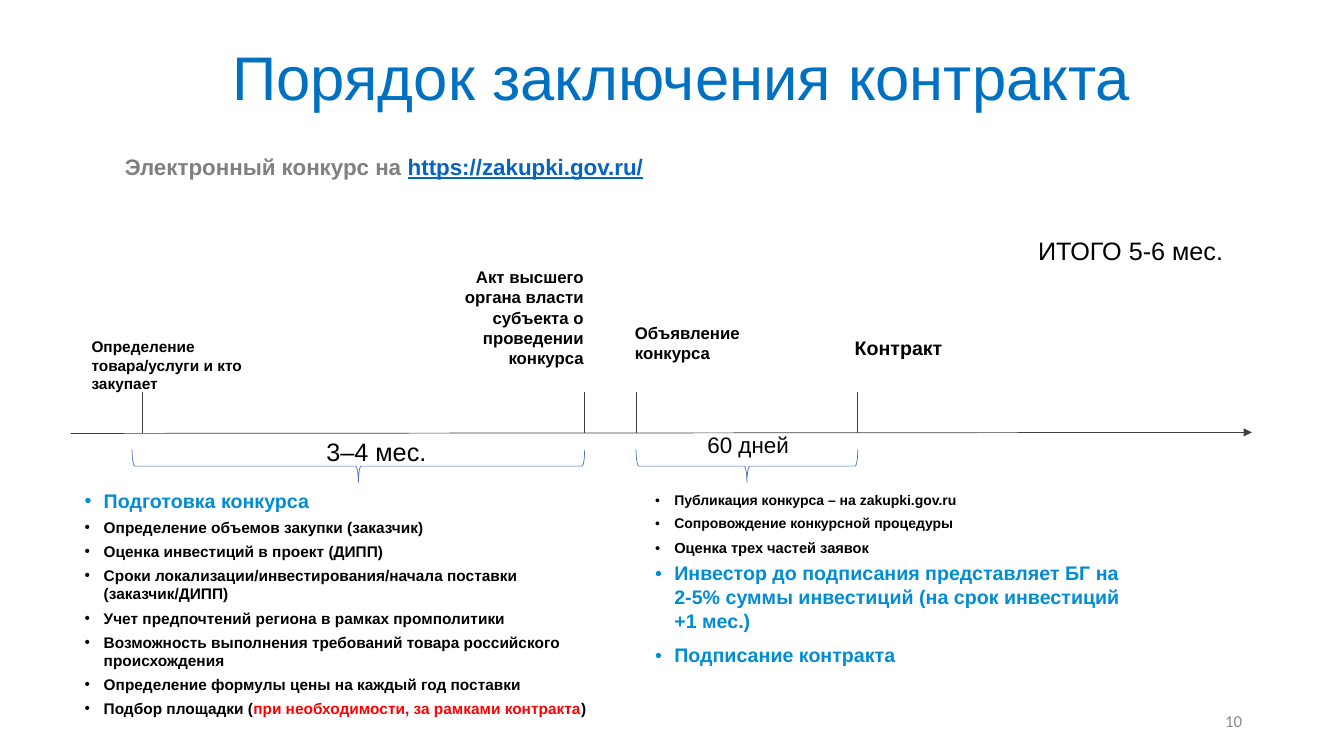
from lxml import etree
from pptx import Presentation
from pptx.dml.color import RGBColor
from pptx.enum.shapes import MSO_CONNECTOR, MSO_SHAPE
from pptx.enum.text import MSO_ANCHOR, PP_ALIGN
from pptx.oxml.ns import qn
from pptx.util import Inches, Pt

LEFT, CENTER, RIGHT, JUSTIFY = PP_ALIGN.LEFT, PP_ALIGN.CENTER, PP_ALIGN.RIGHT, PP_ALIGN.JUSTIFY
TOP, MIDDLE = MSO_ANCHOR.TOP, MSO_ANCHOR.MIDDLE
STRAIGHT, BRACE = MSO_CONNECTOR.STRAIGHT, MSO_SHAPE.RIGHT_BRACE

BLACK = RGBColor(0, 0, 0)
TITLE_BLUE = RGBColor(0x00, 0x70, 0xC0)
ACCENT = RGBColor(0x03, 0x8C, 0xD2)
LINK_BLUE = RGBColor(0x05, 0x63, 0xC1)
BRACE_BLUE = RGBColor(0x44, 0x72, 0xC4)
RED = RGBColor(0xFF, 0, 0)
GRAY = RGBColor(0x80, 0x80, 0x80)
PAGE_GRAY = RGBColor(0x8C, 0x8C, 0x8C)
AXIS_GRAY = RGBColor(0x40, 0x40, 0x40)

# The slide is a grid of 0.1-inch cells; every place below is in cells.
CELL = Inches(0.1)
SLIDE_COLS, SLIDE_ROWS = 133.33, 75
AXIS_START, AXIS_END, AXIS_ROW = 7, 124.2, 43
TICK_ROWS = 4.1
BRACE_ROW, BRACE_ROWS = 44.6, 3.3
START, ACT, NOTICE, CONTRACT = 14.1, 58, 63.1, 85.1
PHASES = [(START - 1, ACT), (NOTICE, CONTRACT)]

# Each paragraph is a list of (text, run format) pairs.
SUBTITLE = [[("Электронный конкурс на ", {}),
             ("https://zakupki.gov.ru/", {"color": LINK_BLUE, "underline": True})]]

# (text, left, top, width, height, format)
LABELS = [
    ("Порядок заключения контракта", 7, 0.7, 121.3, 14.5,
     {"size": 44, "color": TITLE_BLUE, "align": CENTER, "anchor": MIDDLE, "spacing": 0.9}),
    (SUBTITLE, 11.4, 14.7, 101.4, 3.7,
     {"size": 16, "color": GRAY, "bold": True, "align": JUSTIFY, "before": 3}),
    ("ИТОГО 5-6 мес.", 102, 22.9, 31.3, 4, {"size": 18}),
    ("Определение товара/услуги и кто закупает", 8.1, 33, 20.7, 6.6, {"size": 11, "bold": True}),
    ("Акт высшего органа власти субъекта о проведении конкурса", 41.8, 26, 17.1, 11.1,
     {"size": 12, "bold": True, "align": RIGHT}),
    ("Объявление конкурса", 62, 31.5, 15.1, 5, {"size": 12, "bold": True}),
    ("Контракт", 83.8, 32.8, 15.1, 3.4, {"size": 14, "bold": True}),
    ("3–4 мес.", 31.4, 42.8, 17.4, 4, {"size": 18}),
    ("60 дней", 69.2, 42.3, 17.4, 3.7, {"size": 16}),
    ("10", 94.2, 69.5, 30, 4,
     {"size": 12, "font": "Calibri", "color": PAGE_GRAY, "align": RIGHT, "anchor": MIDDLE}),
]

HEADLINE = {"size": 14, "color": ACCENT}
PREPARATION = [
    [("Подготовка конкурса", HEADLINE)],
    "Определение объемов закупки (заказчик)",
    "Оценка инвестиций в проект (ДИПП)",
    "Сроки локализации/инвестирования/начала поставки (заказчик/ДИПП)",
    "Учет предпочтений региона в рамках промполитики",
    "Возможность выполнения требований товара российского происхождения",
    "Определение формулы цены на каждый год поставки",
    [("Подбор площадки (", {}),
     ("при необходимости, за рамками контракта", {"color": RED}),
     (")", {})],
]

# (row height, paragraphs, format)
TENDER = [
    (2, ["Публикация конкурса – на zakupki.gov.ru"], {"size": 10}),
    (2.7, ["Сопровождение конкурсной процедуры"], {"size": 10}),
    (2.1, ["Оценка трех частей заявок"], {"size": 10.5}),
    (2.1, ["Инвестор до подписания представляет БГ на 2-5% суммы инвестиций "
           "(на срок инвестиций +1 мес.)",
           "Подписание контракта"], HEADLINE),
]


def grid(*cells):
    return [round(CELL * n) for n in cells]


def format_run(run, size=12, color=BLACK, bold=False, underline=False, font="Arial"):
    run.font.size = Pt(size)
    run.font.color.rgb = color
    run.font.bold = bold
    run.font.underline = underline
    run.font.name = font


def write(frame, content, align=LEFT, spacing=None, before=0, after=0, bullet=False, **run_format):
    """Fill a text frame from a string or a list of paragraphs."""
    paragraphs = [content] if isinstance(content, str) else content
    for index, runs in enumerate(paragraphs):
        paragraph = frame.paragraphs[0] if index == 0 else frame.add_paragraph()
        paragraph.alignment = align
        paragraph.line_spacing = spacing
        paragraph.space_before, paragraph.space_after = Pt(before), Pt(after)
        if bullet:
            properties = paragraph._p.get_or_add_pPr()
            indent = Inches(0.19)
            properties.set("marL", str(indent))
            properties.set("indent", str(-indent))
            etree.SubElement(properties, qn("a:buFont"), typeface="Arial")
            etree.SubElement(properties, qn("a:buChar"), char="•")
        for text, changes in [(runs, {})] if isinstance(runs, str) else runs:
            run = paragraph.add_run()
            run.text = text
            format_run(run, **{**run_format, **changes})


def add_label(slide, content, left, top, width, height, anchor=TOP, **text_format):
    frame = slide.shapes.add_textbox(*grid(left, top, width, height)).text_frame
    frame.word_wrap = True
    frame.vertical_anchor = anchor
    write(frame, content, **text_format)


def add_line(slide, x1, y1, x2, y2, arrow=False):
    line = slide.shapes.add_connector(STRAIGHT, *grid(x1, y1, x2, y2))
    line.line.color.rgb = AXIS_GRAY
    line.line.width = Pt(0.5)
    if arrow:
        etree.SubElement(line.line._get_or_add_ln(), qn("a:tailEnd"), type="triangle")
    etree.SubElement(line._element.spPr, qn("a:effectLst"))


def add_brace(slide, start, end):
    """Turn a right brace by 90° so that it spans start to end under the axis."""
    span = end - start
    left = (start + end - BRACE_ROWS) / 2
    top = BRACE_ROW + (BRACE_ROWS - span) / 2
    brace = slide.shapes.add_shape(BRACE, *grid(left, top, BRACE_ROWS, span))
    brace.rotation = 90
    brace.shadow.inherit = False
    brace.fill.background()
    brace.line.color.rgb = BRACE_BLUE
    brace.line.width = Pt(0.5)


def add_tender_table(slide, left, top, width):
    height = sum(row[0] for row in TENDER)
    table = slide.shapes.add_table(len(TENDER), 1, *grid(left, top, width, height)).table
    table.first_row = table.horz_banding = False
    for index, (row_height, paragraphs, text_format) in enumerate(TENDER):
        table.rows[index].height = grid(row_height)[0]
        cell = table.cell(index, 0)
        cell.fill.background()
        cell.vertical_anchor = MIDDLE
        cell.margin_left = cell.margin_right = Inches(0.07)
        cell.margin_top = cell.margin_bottom = 0
        write(cell.text_frame, paragraphs, bullet=True, bold=True,
              spacing=1.07, after=8, **text_format)
        borders = cell._tc.get_or_add_tcPr()
        for position, side in enumerate(("a:lnL", "a:lnR", "a:lnT", "a:lnB")):
            border = etree.Element(qn(side), w="0")
            etree.SubElement(border, qn("a:noFill"))
            borders.insert(position, border)


def main():
    deck = Presentation()
    deck.slide_width, deck.slide_height = grid(SLIDE_COLS, SLIDE_ROWS)
    slide = deck.slides.add_slide(deck.slide_layouts[6])
    add_line(slide, AXIS_START, AXIS_ROW, AXIS_END, AXIS_ROW - 0.1, arrow=True)
    for tick in (START, ACT, NOTICE, CONTRACT):
        add_line(slide, tick, AXIS_ROW - TICK_ROWS, tick, AXIS_ROW)
    for start, end in PHASES:
        add_brace(slide, start, end)
    for content, left, top, width, height, text_format in LABELS:
        add_label(slide, content, left, top, width, height, **text_format)
    add_label(slide, PREPARATION, 7.4, 48, 52.1, 24, size=11, bold=True, after=4, bullet=True)
    add_tender_table(slide, 64.3, 48.6, 48.4)
    deck.save("out.pptx")


if __name__ == "__main__":
    main()
